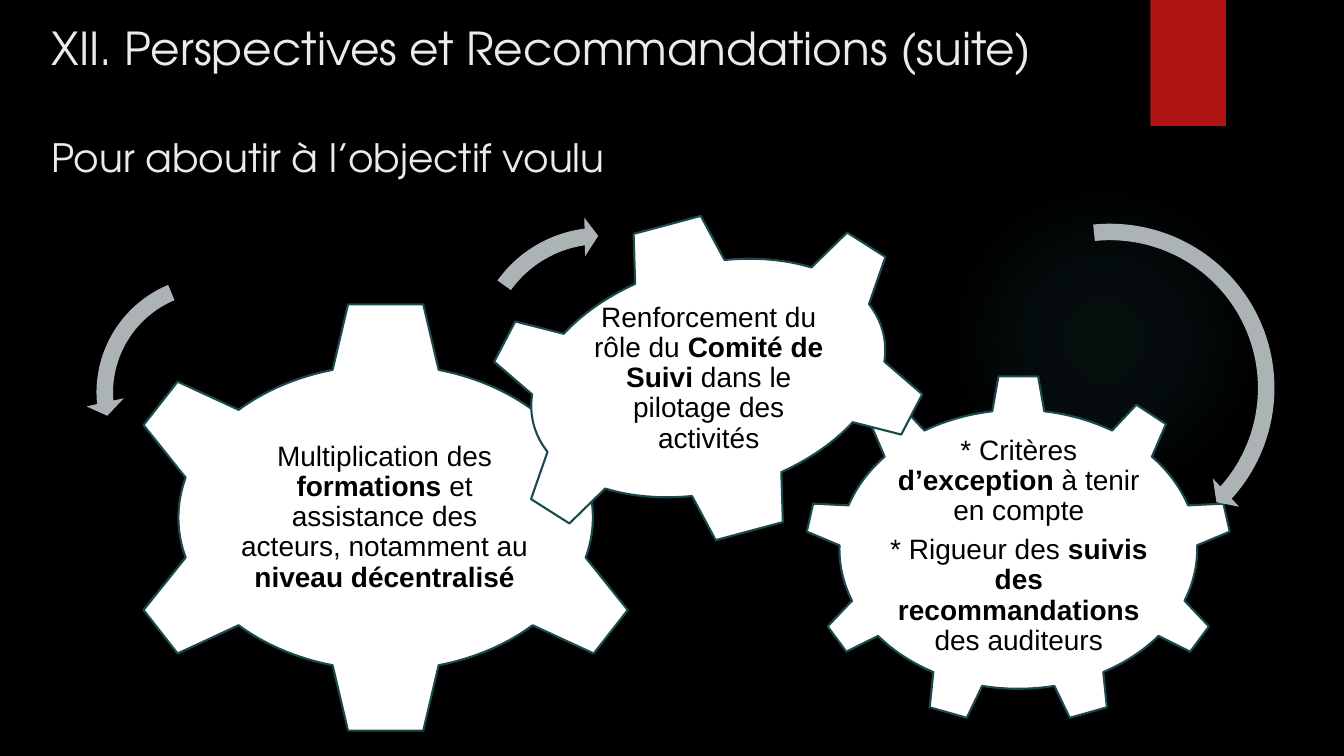
from lxml import etree
from pptx import Presentation
from pptx.dml.color import RGBColor
from pptx.enum.shapes import MSO_SHAPE
from pptx.enum.text import MSO_ANCHOR, MSO_AUTO_SIZE, PP_ALIGN
from pptx.oxml import parse_xml
from pptx.util import Inches, Pt

GEAR_6, GEAR_9 = MSO_SHAPE.GEAR_6, MSO_SHAPE.GEAR_9
ARROW, LEFT_ARROW = MSO_SHAPE.CIRCULAR_ARROW, MSO_SHAPE.LEFT_CIRCULAR_ARROW
TITLE_ONLY = 5
DRAWING_NS = "http://schemas.openxmlformats.org/drawingml/2006/main"

# text, size, space before
TITLE_BOX = (0.41, 0.15, 11.99, 1.11)
TITLE_LINES = [
    ("XII. Perspectives et Recommandations (suite)", 32.4, 0),
    ("Pour aboutir à l’objectif voulu", 27.9, 42),
]
TITLE_FORMAT = {"name": "TeX Gyre Adventor", "bold": False}
BODY_FORMAT = {"name": "Arial", "size": Pt(20)}

GLOW_BOX = (9.41, 1.83, 3.08, 3.08)
GLOW_COLOR = "50B9C1"
GLOW_STOPS = [(0, 7), (36, 6), (69, 0), (100, 0)]  # position %, opacity %
TAB_BOX = (11.41, 0, 0.75, 1.25)

# Each paragraph is a list of (text, bold) runs
GEARS = [
    {"kind": GEAR_9, "box": (7.98, 3.72, 4.24, 3.46), "rotation": 0,
     "text_box": (8.78, 4.53, 2.65, 1.78),
     "paragraphs": [
         [("* Critères ", False), ("d’exception", True), (" à tenir en compte", False)],
         [("* Rigueur des ", False), ("suivis des recommandations", True),
          (" des auditeurs", False)]]},
    {"kind": GEAR_6, "box": (1.12, 2.97, 5.41, 4.33), "rotation": 0,
     "text_box": (2.36, 4.07, 2.91, 2.13),
     "paragraphs": [
         [("Multiplication des ", False), ("formations", True),
          (" et assistance des acteurs, notamment au ", False),
          ("niveau décentralisé", True)]]},
    {"kind": GEAR_6, "box": (4.75, 2.14, 4.55, 3.22), "rotation": 345,
     "text_box": (5.83, 2.77, 2.4, 1.97),
     "paragraphs": [
         [("Renforcement du rôle du ", False), ("Comité de Suivi ", True),
          ("dans le pilotage des activités", False)]]},
]

# kind, left, top, diameter, rotation, adjustments
ARROWS = [
    (ARROW, 9.27, 2.11, 3.48, 0, (0.047, 2.99, 25.235, 158.455, 0.055)),
    (LEFT_ARROW, 0.85, 2.63, 2.53, 0, (0.065, 4.3, 104.891, 148.378, 0.075)),
    (ARROW, 4.59, 2.15, 2.73, 40.5, (0.06, 3.941, 133.138, 105.082, 0.07)),
]


def color(value):
    return RGBColor.from_string(value)


def inches(box):
    return [Inches(length) for length in box]


def apply_font(font, values, text_color):
    for name, value in values.items():
        setattr(font, name, value)
    font.color.rgb = color(text_color)


def add_shape(slide, kind, box, fill, line=None, rotation=0):
    shape = slide.shapes.add_shape(kind, *inches(box))
    shape.shadow.inherit = False
    shape.rotation = rotation
    shape.fill.solid()
    shape.fill.fore_color.rgb = color(fill)
    if line:
        shape.line.color.rgb = color(line)
        shape.line.width = Pt(1.5)
    else:
        shape.line.fill.background()
    return shape


def add_glow(slide):
    """Draw the faint radial light that fades out towards its edge."""
    glow = add_shape(slide, MSO_SHAPE.OVAL, GLOW_BOX, GLOW_COLOR)
    stops = "".join(
        f'<a:gs pos="{position * 1000}"><a:srgbClr val="{GLOW_COLOR}">'
        f'<a:alpha val="{opacity * 1000}"/></a:srgbClr></a:gs>'
        for position, opacity in GLOW_STOPS)
    gradient = parse_xml(
        f'<a:gradFill xmlns:a="{DRAWING_NS}"><a:gsLst>{stops}</a:gsLst>'
        '<a:path path="circle"><a:fillToRect l="50000" t="50000" r="50000" b="50000"/>'
        '</a:path></a:gradFill>')
    properties = glow.element.spPr
    solid = properties.find(etree.QName(DRAWING_NS, "solidFill").text)
    properties.replace(solid, gradient)


def fill_title(title):
    title.left, title.top, title.width, title.height = inches(TITLE_BOX)
    frame = title.text_frame
    frame.word_wrap = True
    frame.auto_size = MSO_AUTO_SIZE.NONE
    frame.vertical_anchor = MSO_ANCHOR.TOP
    for index, (text, size, space_before) in enumerate(TITLE_LINES):
        paragraph = frame.add_paragraph() if index else frame.paragraphs[0]
        paragraph.alignment = PP_ALIGN.LEFT
        paragraph.line_spacing = 1.0
        paragraph.space_before = Pt(space_before)
        run = paragraph.add_run()
        run.text = text
        apply_font(run.font, {**TITLE_FORMAT, "size": Pt(size)}, "EBEBEB")


def add_gear(slide, gear):
    add_shape(slide, gear["kind"], gear["box"], "FFFFFF", "1B4A4D", gear["rotation"])
    frame = slide.shapes.add_textbox(*inches(gear["text_box"])).text_frame
    frame.word_wrap = True
    frame.vertical_anchor = MSO_ANCHOR.MIDDLE
    for side in ("left", "top", "right", "bottom"):
        setattr(frame, f"margin_{side}", Inches(0.03))
    for index, runs in enumerate(gear["paragraphs"]):
        paragraph = frame.add_paragraph() if index else frame.paragraphs[0]
        paragraph.alignment = PP_ALIGN.CENTER
        paragraph.line_spacing = 0.9
        paragraph.space_before = Pt(6 if index else 0)
        for text, bold in runs:
            run = paragraph.add_run()
            run.text = text
            apply_font(run.font, {**BODY_FORMAT, "bold": bold}, "000000")


def main():
    presentation = Presentation()
    presentation.slide_width = Inches(13.33)
    presentation.slide_height = Inches(7.5)
    slide = presentation.slides.add_slide(presentation.slide_layouts[TITLE_ONLY])
    slide.background.fill.solid()
    slide.background.fill.fore_color.rgb = color("000000")

    fill_title(slide.shapes.title)
    add_glow(slide)
    add_shape(slide, MSO_SHAPE.RECTANGLE, TAB_BOX, "B01513")
    for gear in GEARS:
        add_gear(slide, gear)
    for kind, left, top, diameter, rotation, adjustments in ARROWS:
        box = (left, top, diameter, diameter)
        arrow = add_shape(slide, kind, box, "ACB3B4", rotation=rotation)
        for index, value in enumerate(adjustments):
            arrow.adjustments[index] = value

    presentation.save("out.pptx")


if __name__ == "__main__":
    main()
